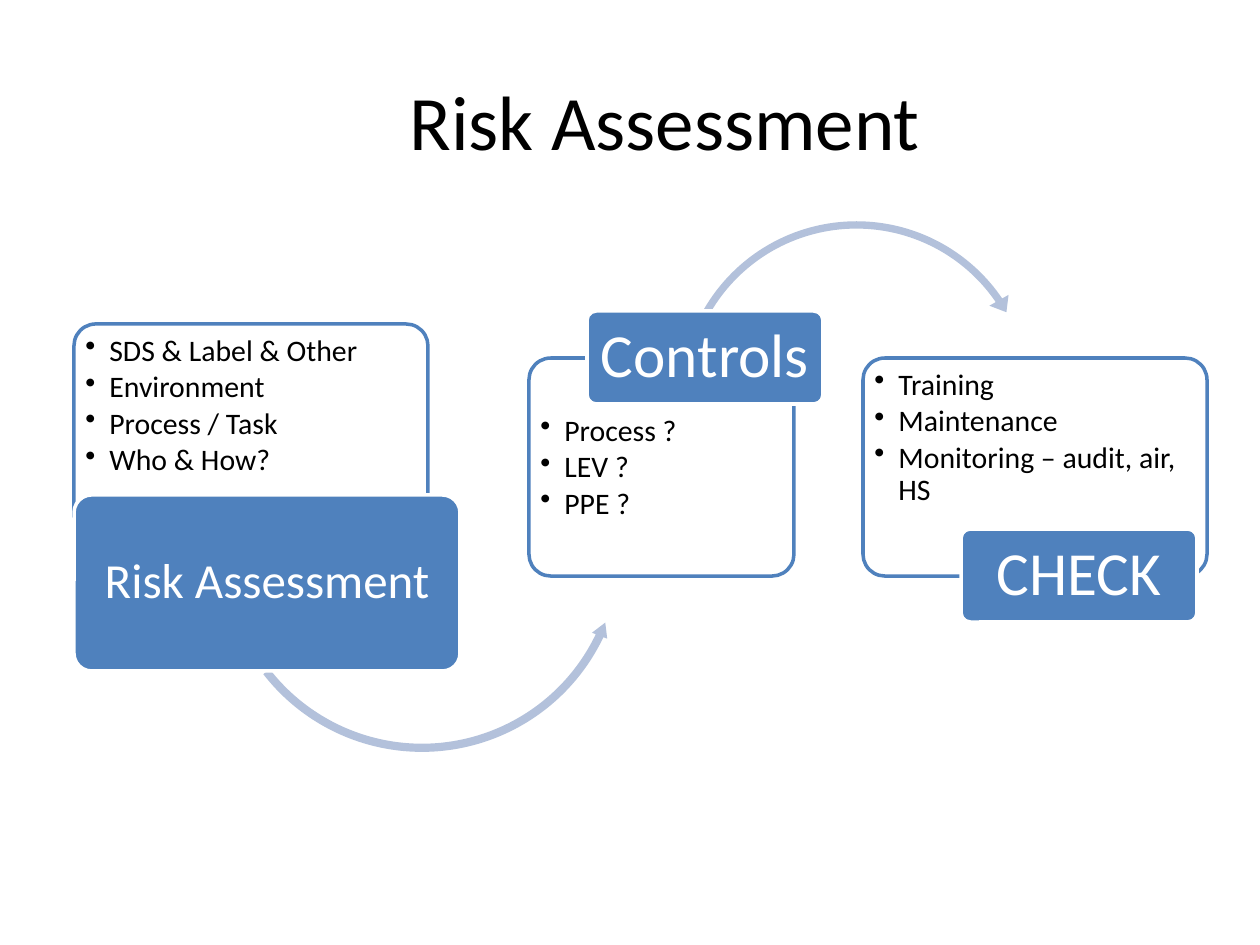
"""Build a slide showing risk assessment leading to controls and checks."""
from dataclasses import dataclass
from typing import NamedTuple, Optional

from lxml.etree import SubElement
from pptx import Presentation
from pptx.dml.color import RGBColor
from pptx.enum.shapes import MSO_SHAPE
from pptx.enum.text import MSO_ANCHOR, PP_ALIGN
from pptx.oxml.ns import qn
from pptx.util import Emu, Pt

EMU_PER_PX = 914400 / 126
FONT = "Calibri"
BLACK = RGBColor(0x00, 0x00, 0x00)
WHITE = RGBColor(0xFF, 0xFF, 0xFF)
BLUE = RGBColor(0x4F, 0x81, 0xBD)
PALE_BLUE = RGBColor(0xB3, 0xC1, 0xDB)
CORNER = 0.1
LABEL_INSET = 8
PANEL_INSET = 5
BULLET_INDENT = 24


class Box(NamedTuple):
    left: int
    top: int
    width: int
    height: int


@dataclass(frozen=True)
class Arrow:
    kind: MSO_SHAPE
    box: Box
    adjustments: tuple[float, ...]


@dataclass(frozen=True)
class Stage:
    name: str
    name_size: int
    label: Box
    panel: Box
    items: tuple[str, ...]
    top_inset: int = PANEL_INSET
    arrow: Optional[Arrow] = None


STAGES = (
    Stage("Risk Assessment", 28, Box(74, 495, 386, 176), Box(74, 324, 354, 218),
          ("SDS & Label & Other", "Environment", "Process / Task", "Who & How?"),
          arrow=Arrow(MSO_SHAPE.LEFT_CIRCULAR_ARROW, Box(217, 346, 410, 410),
                      (0.02, 2.49, 15.3, 85.3, 0.02))),
    Stage("Controls", 35, Box(587, 311, 236, 93), Box(529, 358, 265, 218),
          ("Process ?", "LEV ?", "PPE ?"), top_inset=51,
          arrow=Arrow(MSO_SHAPE.CIRCULAR_ARROW, Box(673, 214, 367, 367),
                      (0.02, 2.8, 195.44, 125.76, 0.03))),
    Stage("CHECK", 35, Box(961, 529, 236, 93), Box(863, 358, 344, 218),
          ("Training", "Maintenance", "Monitoring – audit, air, HS")),
)


def px(length: int) -> Emu:
    """Turn a length in px into EMU."""
    return Emu(round(length * EMU_PER_PX))


def place(box: Box) -> tuple[Emu, ...]:
    """Turn a box in px into EMU."""
    return tuple(px(length) for length in box)


def style_text(frame, size: int, color: RGBColor) -> None:
    """Set the font of every run in a text frame."""
    for paragraph in frame.paragraphs:
        for run in paragraph.runs:
            run.font.name = FONT
            run.font.size = Pt(size)
            run.font.color.rgb = color


def set_insets(frame, side: int, top: int) -> None:
    """Wrap a text frame and set its margins."""
    frame.word_wrap = True
    frame.margin_left = frame.margin_right = px(side)
    frame.margin_top = px(top)
    frame.margin_bottom = px(PANEL_INSET)


def add_rounded(slide, box: Box, fill: RGBColor, outline: RGBColor):
    """Add a rounded rectangle with a two-point outline."""
    rounded = slide.shapes.add_shape(MSO_SHAPE.ROUNDED_RECTANGLE, *place(box))
    rounded.adjustments[0] = CORNER
    rounded.shadow.inherit = False
    rounded.fill.solid()
    rounded.fill.fore_color.rgb = fill
    rounded.line.color.rgb = outline
    rounded.line.width = Pt(2)
    return rounded


def add_panel(slide, stage: Stage) -> None:
    """Add the translucent bulleted panel of a stage."""
    panel = add_rounded(slide, stage.panel, WHITE, BLUE)
    fill_color = panel.fill._xPr.find(qn("a:solidFill"))[0]
    SubElement(fill_color, qn("a:alpha"), val="90000")
    frame = panel.text_frame
    set_insets(frame, PANEL_INSET, stage.top_inset)
    frame.vertical_anchor = MSO_ANCHOR.TOP
    frame.text = "\n".join(stage.items)
    for item in frame.paragraphs:
        properties = item._p.get_or_add_pPr()
        properties.set("marL", str(px(BULLET_INDENT)))
        properties.set("indent", str(-px(BULLET_INDENT)))
        SubElement(properties, qn("a:buChar"), char="•")
        item.alignment = PP_ALIGN.LEFT
        item.line_spacing = 0.9
        item.space_after = Pt(2.5)
    style_text(frame, 17, BLACK)


def add_arrow(slide, arrow: Arrow) -> None:
    """Add a curved arrow leading to the next stage."""
    curve = slide.shapes.add_shape(arrow.kind, *place(arrow.box))
    for index, adjustment in enumerate(arrow.adjustments):
        curve.adjustments[index] = adjustment
    curve.shadow.inherit = False
    curve.fill.solid()
    curve.fill.fore_color.rgb = PALE_BLUE
    curve.line.fill.background()


def add_label(slide, stage: Stage) -> None:
    """Add the solid name label of a stage."""
    frame = add_rounded(slide, stage.label, BLUE, WHITE).text_frame
    set_insets(frame, LABEL_INSET, PANEL_INSET)
    frame.vertical_anchor = MSO_ANCHOR.MIDDLE
    frame.text = stage.name
    frame.paragraphs[0].alignment = PP_ALIGN.CENTER
    frame.paragraphs[0].line_spacing = 0.9
    style_text(frame, stage.name_size, WHITE)


def add_title(slide, title: str) -> None:
    """Add the centred slide title."""
    frame = slide.shapes.add_textbox(*place(Box(164, 45, 1002, 150))).text_frame
    frame.word_wrap = True
    frame.vertical_anchor = MSO_ANCHOR.MIDDLE
    frame.text = title
    frame.paragraphs[0].alignment = PP_ALIGN.CENTER
    style_text(frame, 44, BLACK)


def main() -> None:
    """Build and save the presentation."""
    presentation = Presentation()
    presentation.slide_width = px(1260)
    presentation.slide_height = px(945)
    slide = presentation.slides.add_slide(presentation.slide_layouts[6])
    add_title(slide, "Risk Assessment")
    for stage in STAGES:
        add_panel(slide, stage)
        if stage.arrow:
            add_arrow(slide, stage.arrow)
        add_label(slide, stage)
    presentation.save("out.pptx")


if __name__ == "__main__":
    main()
